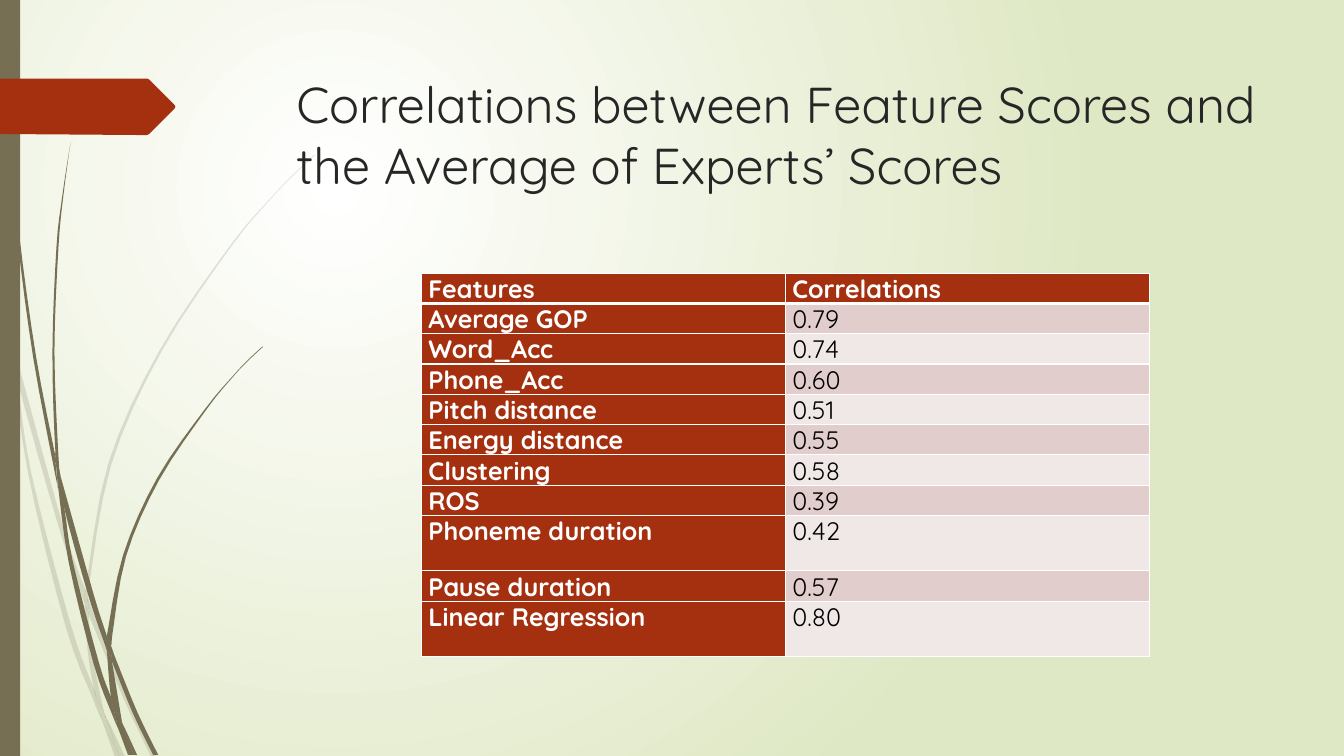
from lxml.etree import SubElement
from pptx import Presentation
from pptx.dml.color import RGBColor
from pptx.enum.shapes import MSO_SHAPE
from pptx.enum.text import PP_ALIGN
from pptx.oxml.ns import qn
from pptx.util import Pt

PX = 9144  # 100 px to the inch
WIDE, HIGH = 1333, 750
FONT = "Quicksand"
WHITE = RGBColor(0xFF, 0xFF, 0xFF)
BLACK = RGBColor(0, 0, 0)
INK = RGBColor(0x26, 0x26, 0x26)
PALE = RGBColor(0xDF, 0xE8, 0xC4)
OLIVE = RGBColor(0x76, 0x6F, 0x54)
RUST = RGBColor(0xA5, 0x30, 0x10)
BANDS = RGBColor(0xE1, 0xCD, 0xCC), RGBColor(0xF0, 0xE8, 0xE7)

# Each blade of grass is a pair of edges: one way out, the other way back.
FAINT = [
    ([(11, 350), (9, 322), (0, 282)], [(0, 299), (10, 344), (11, 350)]),
    ([(14, 345), (17, 376), (58, 522), (84, 599)], [(85, 586), (62, 520), (14, 345)]),
    ([(92, 607), (88, 596), (88, 610)],
     [(88, 610), (123, 694), (150, 751)], [(155, 751), (127, 692), (92, 607)]),
    ([(119, 751), (124, 751)], [(124, 751), (105, 711), (119, 751)]),
    ([(93, 683), (70, 619), (31, 469), (17, 376), (11, 350)],
     [(11, 350), (28, 470), (65, 621), (92, 693), (101, 714)],
     [(101, 714), (99, 707), (93, 683)]),
    ([(84, 599), (87, 646), (93, 683), (96, 692), (105, 711)],
     [(105, 711), (103, 706), (91, 646), (88, 610), (88, 608), (84, 599)]),
    ([(88, 596), (88, 584), (110, 462), (160, 349), (229, 245), (268, 198),
      (290, 175), (312, 154)],
     [(312, 153), (289, 175), (268, 197), (228, 244), (158, 348), (107, 461),
      (85, 584), (85, 586)]),
    ([(101, 714), (114, 751)], [(119, 751), (101, 714)]),
    ([(88, 608), (88, 610), (88, 596)], [(85, 586), (84, 599), (88, 608)]),
    ([(96, 692), (93, 683), (99, 707), (101, 714), (119, 751)],
     [(119, 751), (105, 711), (96, 692)]),
]
SOLID = [
    ([(3, 0), (4, 48), (7, 110), (17, 233), (33, 355), (56, 477), (57, 481)],
     [(55, 457), (55, 453), (36, 355), (19, 232), (8, 109), (5, 48), (4, 0)]),
    ([(60, 472), (64, 505), (88, 592), (106, 645)],
     [(106, 633), (106, 631), (93, 590), (60, 472)]),
    ([(113, 649), (110, 641), (111, 656)],
     [(111, 656), (132, 708), (152, 749)], [(157, 749), (136, 706), (113, 649)]),
    ([(110, 691), (98, 657), (72, 556), (64, 505), (57, 477)],
     [(57, 477), (68, 557), (93, 659), (111, 708), (117, 722)],
     [(117, 722), (116, 717), (110, 691)]),
    ([(60, 472), (58, 453), (54, 349), (58, 245), (63, 193), (70, 141)],
     [(70, 141), (62, 193), (56, 245), (52, 349), (55, 449), (60, 472)]),
    ([(133, 749), (136, 749)], [(136, 749), (122, 719), (133, 749)]),
    ([(57, 477), (64, 505), (60, 472)], [(60, 472), (55, 449), (55, 453), (57, 477)]),
    ([(111, 633), (125, 552), (158, 476), (205, 406), (231, 374), (245, 359), (261, 344)],
     [(260, 344), (245, 358), (231, 373), (204, 405), (156, 474), (122, 551), (106, 631)],
     [(106, 631), (110, 641), (111, 633)]),
    ([(117, 722), (127, 749)], [(131, 749), (117, 722)]),
    ([(106, 645), (110, 691), (116, 706), (122, 719)],
     [(122, 719), (121, 716), (111, 656), (109, 651), (106, 645)]),
    ([(106, 645), (109, 651), (111, 656), (110, 641)], [(106, 631), (106, 633), (106, 645)]),
    ([(116, 706), (110, 691), (116, 717), (117, 722), (130, 749)],
     [(133, 749), (122, 719), (116, 706)]),
]
TAB = [(0, 0), (136, 0), (146, 0), (148, 1), (173, 26), (174, 28),
       (173, 30), (148, 55), (146, 56), (136, 56), (0, 55)]
ROWS = [
    ("Features", "Correlations"),
    ("Average GOP", "0.79"),
    ("Word_Acc", "0.74"),
    ("Phone_Acc", "0.60"),
    ("Pitch distance", "0.51"),
    ("Energy distance", "0.55"),
    ("Clustering", "0.58"),
    ("ROS", "0.39"),
    ("Phoneme duration", "0.42"),
    ("Pause duration", "0.57"),
    ("Linear Regression", "0.80"),
]
TALL = {"Phoneme duration", "Linear Regression"}


def box(*sides):
    return [side * PX for side in sides]


def write(frame, text, size=18, color=BLACK, bold=False, align=PP_ALIGN.LEFT):
    para = frame.paragraphs[0]
    para.alignment = align
    run = para.add_run()
    run.text = text
    font = run.font
    font.name, font.size, font.bold = FONT, Pt(size), bold
    font.color.rgb = color


def paint(shape, color, alpha=100):
    shape.shadow.inherit = False
    shape.fill.solid()
    shape.fill.fore_color.rgb = color
    shape.line.fill.background()
    if alpha < 100:
        tone = shape._element.spPr.find(".//" + qn("a:srgbClr"))
        SubElement(tone, qn("a:alpha"), val=str(alpha * 1000))


def smooth(edge, steps=4):
    """Points of a Catmull-Rom curve through an edge."""
    ends = [edge[0], *edge, edge[-1]]
    points = [edge[0]]
    for a, b, c, d in zip(ends, ends[1:], ends[2:], ends[3:]):
        for step in range(1, steps + 1):
            t = step / steps
            points.append(tuple(
                q + t / 2 * (r - p + t * (2 * p - 5 * q + 4 * r - s
                                          + t * (3 * (q - r) + s - p)))
                for p, q, r, s in zip(a, b, c, d)))
    return points


def outline(shapes, points, left=0, top=0):
    spots = [(round((left + x) * PX), round((top + y) * PX)) for x, y in points]
    pen = shapes.build_freeform(*spots[0])
    pen.add_line_segments(spots[1:])
    return pen.convert_to_shape()


def backdrop(slide):
    fill = slide.background.fill
    fill.gradient()
    for stop, color, place in zip(fill.gradient_stops, (WHITE, PALE), (0, 1)):
        stop.color.rgb = color
        stop.position = place
    grad = slide._element.find(".//" + qn("a:gradFill"))
    grad.remove(grad.find(qn("a:lin")))
    ring = SubElement(grad, qn("a:path"), path="circle")
    SubElement(ring, qn("a:fillToRect"), l="50000", t="50000", r="100000", b="100000")


def grass(slide, blades, alpha):
    group = slide.shapes.add_group_shape()
    for blade in blades:
        points = [point for edge in blade for point in smooth(edge)]
        paint(outline(group.shapes, points), OLIVE, alpha)


def margin(slide, left, top, wide, high):
    """Left strip with the grass and the arrow tab."""
    grass(slide, FAINT, 20)
    grass(slide, SOLID, 100)
    strip = slide.shapes.add_shape(MSO_SHAPE.RECTANGLE, *box(left, top, wide, high))
    paint(strip, OLIVE)
    paint(outline(slide.shapes, TAB, left, top + 78), RUST)


def title(slide, text, *area):
    frame = slide.shapes.add_textbox(*box(*area)).text_frame
    frame.word_wrap = True
    write(frame, text, size=36, color=INK)


def border(cell, **widths):
    props = cell._tc.get_or_add_tcPr()
    for side in "LRTB":
        line = SubElement(props, qn("a:ln" + side), w=str(Pt(widths.get(side, 1))))
        solid = SubElement(line, qn("a:solidFill"))
        SubElement(solid, qn("a:srgbClr"), val=str(WHITE))


def scores(slide, left, top, wide):
    heights = [55 if name in TALL else 28 for name, _ in ROWS]
    table = slide.shapes.add_table(
        len(ROWS), 2, *box(left, top, wide, sum(heights))).table
    for i, (row, high) in enumerate(zip(ROWS, heights)):
        table.rows[i].height = high * PX
        for j, text in enumerate(row):
            cell = table.cell(i, j)
            head = i == 0 or j == 0
            border(cell, T=3 if i == 1 else 1, B=3 if i == 0 else 1)
            cell.fill.solid()
            cell.fill.fore_color.rgb = RUST if head else BANDS[(i - 1) % 2]
            cell.margin_left = cell.margin_right = 7 * PX
            cell.margin_top = cell.margin_bottom = 0
            write(cell.text_frame, text, color=WHITE if head else BLACK,
                  bold=head, align=PP_ALIGN.JUSTIFY)


def main():
    deck = Presentation()
    deck.slide_width, deck.slide_height = box(WIDE, HIGH)
    slide = deck.slides.add_slide(deck.slide_layouts[6])
    backdrop(slide)
    margin(slide, 0, 0, 20, HIGH)
    title(slide, "Correlations between Feature Scores and the Average of Experts’ Scores",
          284, 68, 975, 140)
    scores(slide, 418, 271, 722)
    deck.save("out.pptx")


if __name__ == "__main__":
    main()
